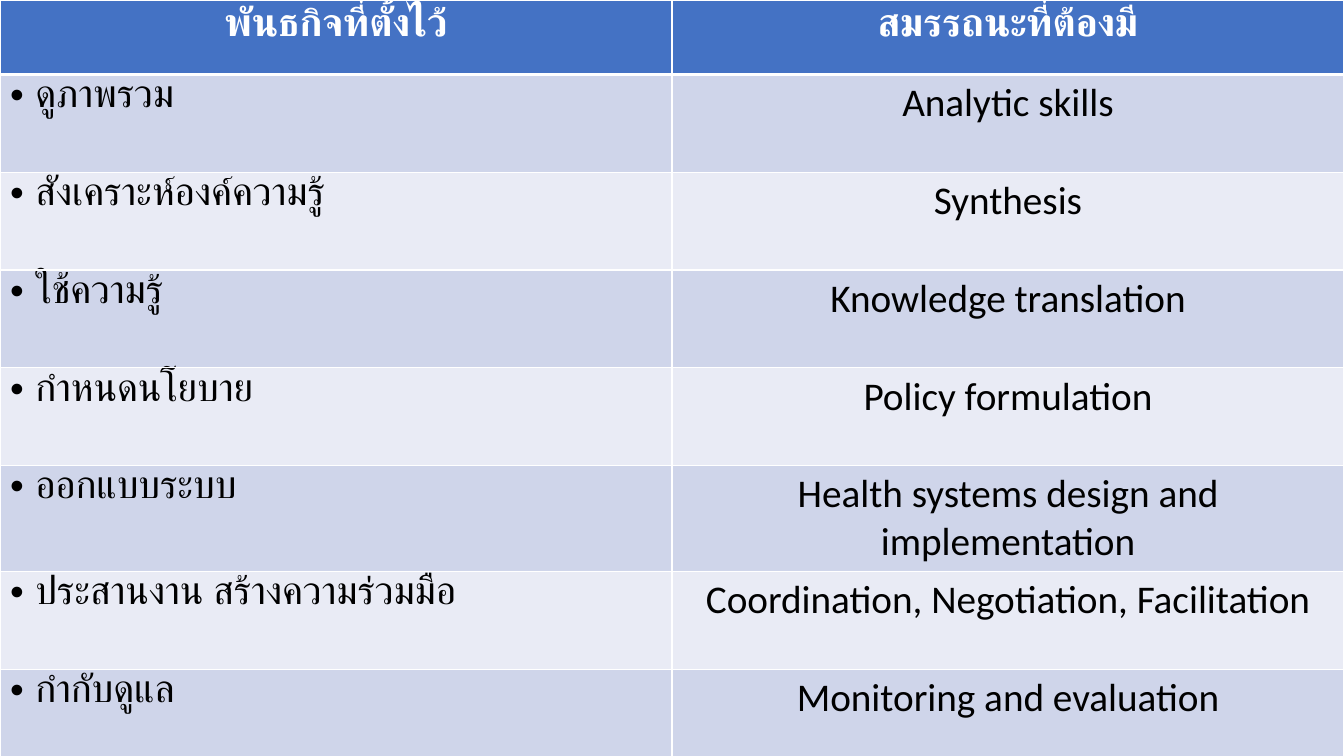
from lxml import etree
from pptx import Presentation
from pptx.dml.color import RGBColor
from pptx.enum import text
from pptx.oxml import ns
from pptx.util import Inches, Pt

WHITE = RGBColor(0xFF, 0xFF, 0xFF)
BLACK = RGBColor(0, 0, 0)
HEADER_BLUE = RGBColor(0x44, 0x72, 0xC4)
BANDS = (RGBColor(0xCF, 0xD5, 0xEA), RGBColor(0xE9, 0xEB, 0xF5))
FONT = "Calibri"
SLIDE_WIDTH, SLIDE_HEIGHT = 13.33, 7.5
HEADER_HEIGHT, MISSION_HEIGHT = 0.74, 0.97

HEADINGS = ("พันธกิจที่ตั้งไว้", "สมรรถนะที่ต้องมี")
MISSIONS = (
    ("ดูภาพรวม", "Analytic skills"),
    ("สังเคราะห์องค์ความรู้", "Synthesis"),
    ("ใช้ความรู้", "Knowledge translation"),
    ("กำหนดนโยบาย", "Policy formulation"),
    ("ออกแบบระบบ", "Health systems design and implementation"),
    ("ประสานงาน สร้างความร่วมมือ", "Coordination, Negotiation, Facilitation"),
    ("กำกับดูแล", "Monitoring and evaluation"),
)


def add_bullet(paragraph):
    paragraph.line_spacing = 0.9
    paragraph.space_before = Pt(10)
    properties = paragraph._p.get_or_add_pPr()
    properties.set("marL", str(Inches(0.25)))
    properties.set("indent", str(Inches(-0.25)))
    etree.SubElement(properties, ns.qn("a:buFont"), typeface="Arial")
    etree.SubElement(properties, ns.qn("a:buChar"), char="•")


def write_text(cell, wording, *, color=BLACK, bold=False, bullet=False):
    paragraph = cell.text_frame.paragraphs[0]
    if bullet:
        paragraph.alignment = text.PP_ALIGN.LEFT
        add_bullet(paragraph)
    else:
        paragraph.alignment = text.PP_ALIGN.CENTER
    run = paragraph.add_run()
    run.text = wording
    run.font.name = FONT
    run.font.size = Pt(28)
    run.font.bold = bold
    run.font.color.rgb = color


def style_cell(cell, fill, *, top=1, bottom=1):
    properties = cell._tc.get_or_add_tcPr()
    for side, width in (("L", 1), ("R", 1), ("T", top), ("B", bottom)):
        border = etree.SubElement(properties, ns.qn(f"a:ln{side}"), w=str(Pt(width)))
        paint = etree.SubElement(border, ns.qn("a:solidFill"))
        etree.SubElement(paint, ns.qn("a:srgbClr"), val=str(WHITE))
    cell.fill.solid()
    cell.fill.fore_color.rgb = fill


def add_competency_table(slide):
    competencies = slide.shapes.add_table(
        len(MISSIONS) + 1, len(HEADINGS), 0, 0,
        Inches(SLIDE_WIDTH), Inches(SLIDE_HEIGHT),
    ).table
    for column in competencies.columns:
        column.width = Inches(SLIDE_WIDTH / len(HEADINGS))
    for index, row in enumerate(competencies.rows):
        row.height = Inches(MISSION_HEIGHT if index else HEADER_HEIGHT)

    for column, heading in enumerate(HEADINGS):
        cell = competencies.cell(0, column)
        style_cell(cell, HEADER_BLUE, bottom=3)
        write_text(cell, heading, color=WHITE, bold=True)

    for index, mission in enumerate(MISSIONS):
        for column, wording in enumerate(mission):
            cell = competencies.cell(index + 1, column)
            style_cell(cell, BANDS[index % 2], top=1 if index else 3)
            write_text(cell, wording, bullet=column == 0)


def main():
    deck = Presentation()
    deck.slide_width = Inches(SLIDE_WIDTH)
    deck.slide_height = Inches(SLIDE_HEIGHT)
    slide = deck.slides.add_slide(deck.slide_layouts.get_by_name("Blank"))
    add_competency_table(slide)
    deck.save("out.pptx")


if __name__ == "__main__":
    main()
